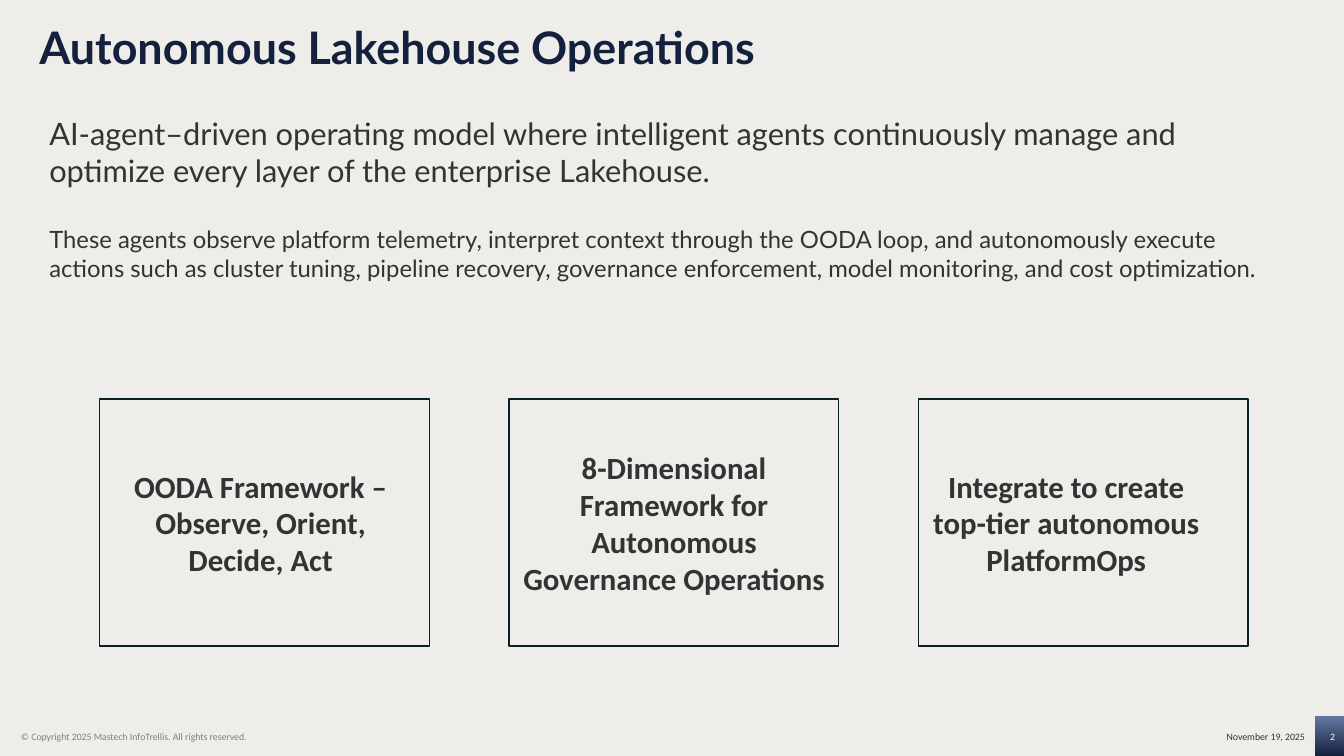
from dataclasses import dataclass

from pptx import Presentation
from pptx.dml.color import RGBColor
from pptx.enum.shapes import MSO_SHAPE
from pptx.enum.text import MSO_ANCHOR, MSO_AUTO_SIZE, PP_ALIGN
from pptx.util import Inches, Pt

TITLE = "Autonomous Lakehouse Operations"
LEAD = (
    "AI-agent–driven operating model where intelligent agents continuously manage and "
    "optimize every layer of the enterprise Lakehouse."
)
DETAIL = (
    "These agents observe platform telemetry, interpret context through the OODA loop, "
    "and autonomously execute actions such as cluster tuning, pipeline recovery, "
    "governance enforcement, model monitoring, and cost optimization."
)
CARDS = [
    [("OODA Framework –", 0.08), ("Observe, Orient, Decide, Act", 0)],
    [("8-Dimensional Framework for Autonomous Governance Operations", 0)],
    [("Integrate to create", 0.34), ("top-tier autonomous PlatformOps", 0)],
]
COPYRIGHT = "© Copyright 2025 Mastech InfoTrellis. All rights reserved."
DATE = "November 19, 2025"
PAGE_NUMBER = "2"


@dataclass(frozen=True)
class Theme:
    heading_font: str = "Lato"
    body_font: str = "Calibri"
    paper: str = "EEEDE9"
    navy: str = "14213D"
    steel: str = "647AA3"
    outline: str = "0B2026"
    ink: str = "333333"
    muted: str = "7F7F7F"
    white: str = "FFFFFF"
    title_size: int = 32
    large_size: int = 22
    detail_size: int = 17
    footer_size: int = 7


THEME = Theme()
CARD_LEFT, CARD_TOP, CARD_WIDTH, CARD_HEIGHT = 0.99, 3.96, 3.27, 2.45
CARD_STEP = 4.06


def color(code):
    return RGBColor.from_string(code)


def style(para, name, size, code, bold=False, align=PP_ALIGN.LEFT):
    para.alignment = align
    para.font.name = name
    para.font.size = Pt(size)
    para.font.bold = bold
    para.font.color.rgb = color(code)


def add_text(page, area, lines, name, code, align=PP_ALIGN.LEFT, anchor=MSO_ANCHOR.TOP):
    frame = page.shapes.add_textbox(*map(Inches, area)).text_frame
    frame.word_wrap = True
    frame.vertical_anchor = anchor
    frame.text = "\n".join(text for text, size, gap in lines)
    for para, (text, size, gap) in zip(frame.paragraphs, lines):
        style(para, name, size, code, align=align)
        if gap:
            para.space_before = Pt(gap)


def add_title(page):
    title = page.shapes.title
    title.left, title.top, title.width, title.height = map(Inches, (0.29, 0.21, 10.05, 0.49))
    frame = title.text_frame
    frame.text = TITLE
    frame.word_wrap = True
    frame.auto_size = MSO_AUTO_SIZE.NONE
    frame.vertical_anchor = MSO_ANCHOR.TOP
    para = frame.paragraphs[0]
    style(para, THEME.heading_font, THEME.title_size, THEME.navy, bold=True)
    para.line_spacing = 0.9


def add_card(page, left, lines):
    card = page.shapes.add_shape(
        MSO_SHAPE.RECTANGLE, *map(Inches, (left, CARD_TOP, CARD_WIDTH, CARD_HEIGHT))
    )
    card.shadow.inherit = False
    card.fill.solid()
    card.fill.fore_color.rgb = color(THEME.paper)
    card.line.color.rgb = color(THEME.outline)
    card.line.width = Pt(1)
    frame = card.text_frame
    frame.word_wrap = True
    frame.vertical_anchor = MSO_ANCHOR.MIDDLE
    frame.text = "\n".join(text for text, indent in lines)
    for para, (text, indent) in zip(frame.paragraphs, lines):
        style(para, THEME.body_font, THEME.large_size, THEME.ink, True, PP_ALIGN.CENTER)
        if indent:
            para._p.get_or_add_pPr().set("marR", str(Inches(indent)))


def add_footer(page):
    badge = page.shapes.add_shape(MSO_SHAPE.RECTANGLE, *map(Inches, (13.04, 7.1, 0.29, 0.4)))
    badge.shadow.inherit = False
    badge.line.fill.background()
    badge.fill.gradient()
    badge.fill.gradient_angle = 270
    for stop, code in zip(badge.fill.gradient_stops, (THEME.steel, THEME.navy)):
        stop.color.rgb = color(code)
    for text, area, code, align in (
        (COPYRIGHT, (0.11, 7.11, 3.01, 0.4), THEME.muted, PP_ALIGN.LEFT),
        (PAGE_NUMBER, (12.9, 7.11, 0.44, 0.4), THEME.white, PP_ALIGN.RIGHT),
        (DATE, (10.04, 7.14, 3, 0.34), THEME.ink, PP_ALIGN.RIGHT),
    ):
        lines = [(text, THEME.footer_size, 0)]
        add_text(page, area, lines, THEME.body_font, code, align, MSO_ANCHOR.MIDDLE)


def main():
    deck = Presentation()
    deck.slide_width, deck.slide_height = Inches(13.33), Inches(7.5)
    page = deck.slides.add_slide(deck.slide_layouts[5])
    page.background.fill.solid()
    page.background.fill.fore_color.rgb = color(THEME.paper)
    add_footer(page)
    add_title(page)
    for index, lines in enumerate(CARDS):
        add_card(page, CARD_LEFT + index * CARD_STEP, lines)
    summary = [(LEAD, THEME.large_size, 0), (DETAIL, THEME.detail_size, 26)]
    add_text(page, (0.39, 1.09, 12.28, 2.07), summary, THEME.heading_font, THEME.ink)
    deck.save("out.pptx")


if __name__ == "__main__":
    main()
